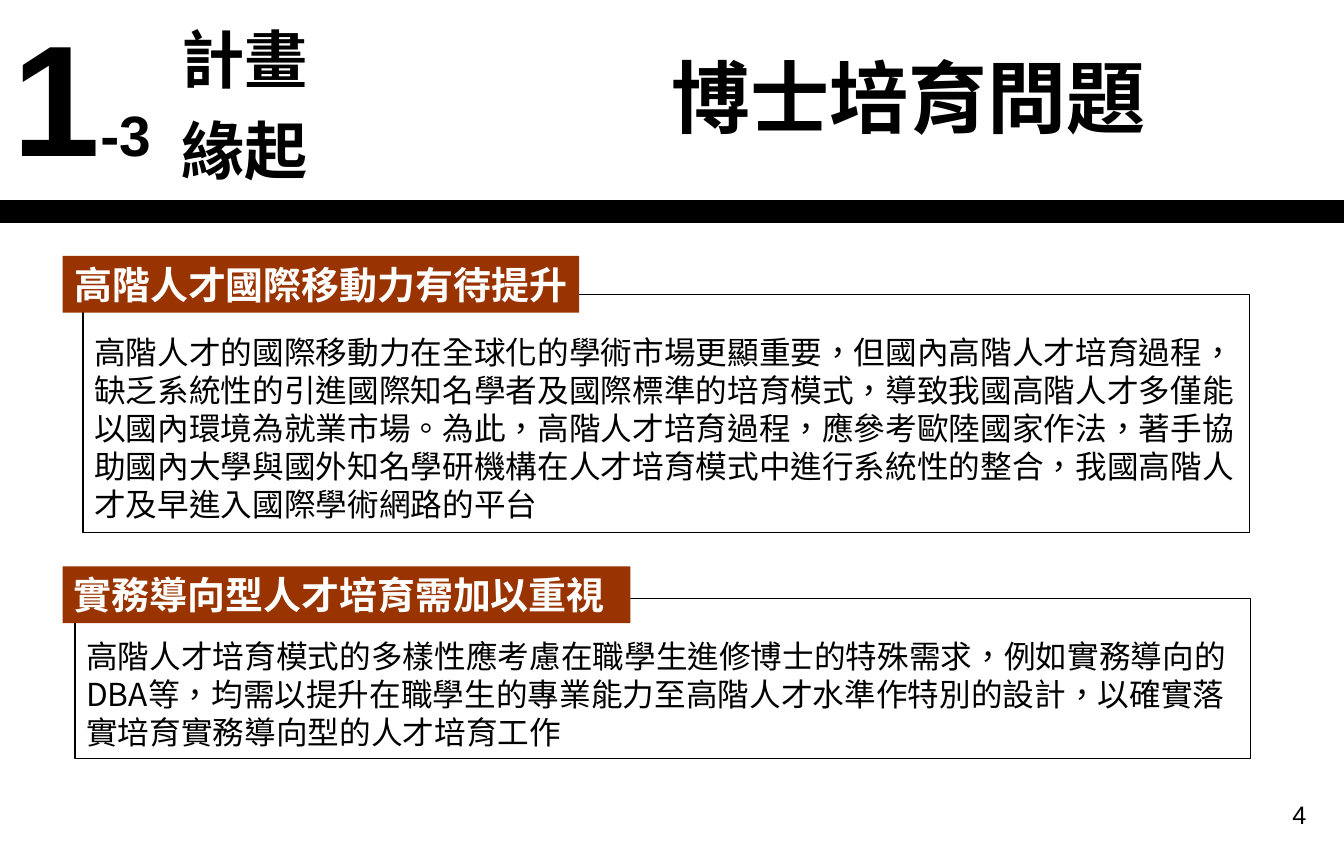
"""Build the slide on problems in doctoral training."""
from dataclasses import dataclass

from lxml.etree import SubElement
from pptx import Presentation
from pptx.dml.color import RGBColor
from pptx.enum.shapes import MSO_CONNECTOR, MSO_SHAPE
from pptx.enum.text import MSO_ANCHOR, MSO_AUTO_SIZE, PP_ALIGN
from pptx.oxml.ns import qn
from pptx.util import Inches, Pt

COLORS = {"ink": "000000", "heading": "993300", "paper": "FFFFFF"}
CJK_FONT = "Noto Sans CJK SC"
LATIN_FONT = "Arial"
PLAIN_TABLE_STYLE = "{2D5ABB26-0587-4C30-8999-92F81FD0307C}"
SLIDE_WIDTH, SLIDE_HEIGHT = 11 + 13 / 16, 7.5
HEADING_LEFT, HEADING_HEIGHT = 0.55, 0.5


@dataclass
class Section:
    heading: str
    heading_top: float
    heading_width: float
    heading_align: PP_ALIGN
    body: str
    body_box: tuple[float, float, float, float]


SECTIONS = [
    Section(
        "高階人才國際移動力有待提升", 2.25, 4.54, PP_ALIGN.CENTER,
        "高階人才的國際移動力在全球化的學術市場更顯重要，但國內高階人才培育過程，"
        "缺乏系統性的引進國際知名學者及國際標準的培育模式，導致我國高階人才多僅能"
        "以國內環境為就業市場。為此，高階人才培育過程，應參考歐陸國家作法，著手協"
        "助國內大學與國外知名學研機構在人才培育模式中進行系統性的整合，我國高階人"
        "才及早進入國際學術網路的平台",
        (0.73, 2.59, 10.25, 2.09),
    ),
    Section(
        "實務導向型人才培育需加以重視", 4.98, 4.99, PP_ALIGN.LEFT,
        "高階人才培育模式的多樣性應考慮在職學生進修博士的特殊需求，例如實務導向的"
        "DBA等，均需以提升在職學生的專業能力至高階人才水準作特別的設計，以確實落"
        "實培育實務導向型的人才培育工作",
        (0.66, 5.26, 10.33, 1.41),
    ),
]


def add_span(para, text: str, *, size: float, font: str = CJK_FONT,
             color: str = "ink", bold: bool = False) -> None:
    span = para.add_run()
    span.text = text
    span.font.size = Pt(size)
    span.font.bold = bold
    span.font.name = font
    span.font.color.rgb = RGBColor.from_string(COLORS[color])
    properties = span._r.get_or_add_rPr()
    properties.set("lang", "zh-TW")
    SubElement(properties, qn("a:ea")).set("typeface", CJK_FONT)


def set_frame(frame, *, anchor=MSO_ANCHOR.TOP, top: float = 0.05,
              align=PP_ALIGN.LEFT):
    frame.word_wrap = True
    frame.auto_size = MSO_AUTO_SIZE.NONE
    frame.vertical_anchor = anchor
    frame.margin_left = frame.margin_right = Inches(0.1)
    frame.margin_top, frame.margin_bottom = Inches(top), Inches(0.05)
    para = frame.paragraphs[0]
    para.alignment = align
    return para


def add_rectangle(page, place: tuple[float, float, float, float], *,
                  fill: str | None = None, line: str | None = None):
    box = page.shapes.add_shape(MSO_SHAPE.RECTANGLE, *map(Inches, place))
    box.shadow.inherit = False
    if fill:
        box.fill.solid()
        box.fill.fore_color.rgb = RGBColor.from_string(COLORS[fill])
    else:
        box.fill.background()
    if line:
        box.line.color.rgb = RGBColor.from_string(COLORS[line])
        box.line.width = Pt(0.75)
    else:
        box.line.fill.background()
    return box


def add_section(page, section: Section) -> None:
    body = add_rectangle(page, section.body_box, line="ink")
    para = set_frame(body.text_frame, top=0.34)
    para.line_spacing = Pt(24)
    add_span(para, section.body, size=20)
    place = (HEADING_LEFT, section.heading_top, section.heading_width, HEADING_HEIGHT)
    heading = add_rectangle(page, place, fill="heading")
    para = set_frame(heading.text_frame, anchor=MSO_ANCHOR.MIDDLE,
                     align=section.heading_align)
    add_span(para, section.heading, size=24, color="paper", bold=True)


def add_chapter_table(page) -> None:
    place = map(Inches, (0.01, 0.01, 2.97, 1.77))
    table = page.shapes.add_table(1, 2, *place).table
    table.first_row = table.horz_banding = False
    table._tbl.tblPr.find(qn("a:tableStyleId")).text = PLAIN_TABLE_STYLE
    for cell in table.iter_cells():
        cell.fill.background()
        cell.vertical_anchor = MSO_ANCHOR.MIDDLE
    number, name = (cell.text_frame.paragraphs[0] for cell in table.iter_cells())
    add_span(number, "1", size=100, font=LATIN_FONT, bold=True)
    add_span(number, "-3", size=36, font=LATIN_FONT, bold=True)
    add_span(name, "計畫緣起", size=40, font=LATIN_FONT, bold=True)


def add_divider(page) -> None:
    ends = map(Inches, (0, 1.86, SLIDE_WIDTH, 1.86))
    divider = page.shapes.add_connector(MSO_CONNECTOR.STRAIGHT, *ends)
    divider.line.color.rgb = RGBColor.from_string(COLORS["ink"])
    divider.line.width = Pt(15)
    SubElement(divider._element.spPr, qn("a:effectLst"))


def set_title(page, text: str) -> None:
    title = page.shapes.title
    title.left, title.top, title.width, title.height = map(Inches, (5.8, 0.37, 5.59, 0.94))
    para = set_frame(title.text_frame, anchor=MSO_ANCHOR.MIDDLE)
    add_span(para, text, size=50, bold=True)


def add_page_number(page, number: str) -> None:
    box = page.shapes.add_textbox(*map(Inches, (8.82, 6.98, 2.76, 0.52)))
    para = set_frame(box.text_frame, align=PP_ALIGN.RIGHT)
    add_span(para, number, size=16, font=LATIN_FONT)


def main() -> None:
    deck = Presentation()
    deck.slide_width, deck.slide_height = Inches(SLIDE_WIDTH), Inches(SLIDE_HEIGHT)
    page = deck.slides.add_slide(deck.slide_layouts.get_by_name("Title Only"))
    add_divider(page)
    add_chapter_table(page)
    add_page_number(page, "4")
    for section in SECTIONS:
        add_section(page, section)
    set_title(page, "博士培育問題")
    deck.save("out.pptx")


if __name__ == "__main__":
    main()
